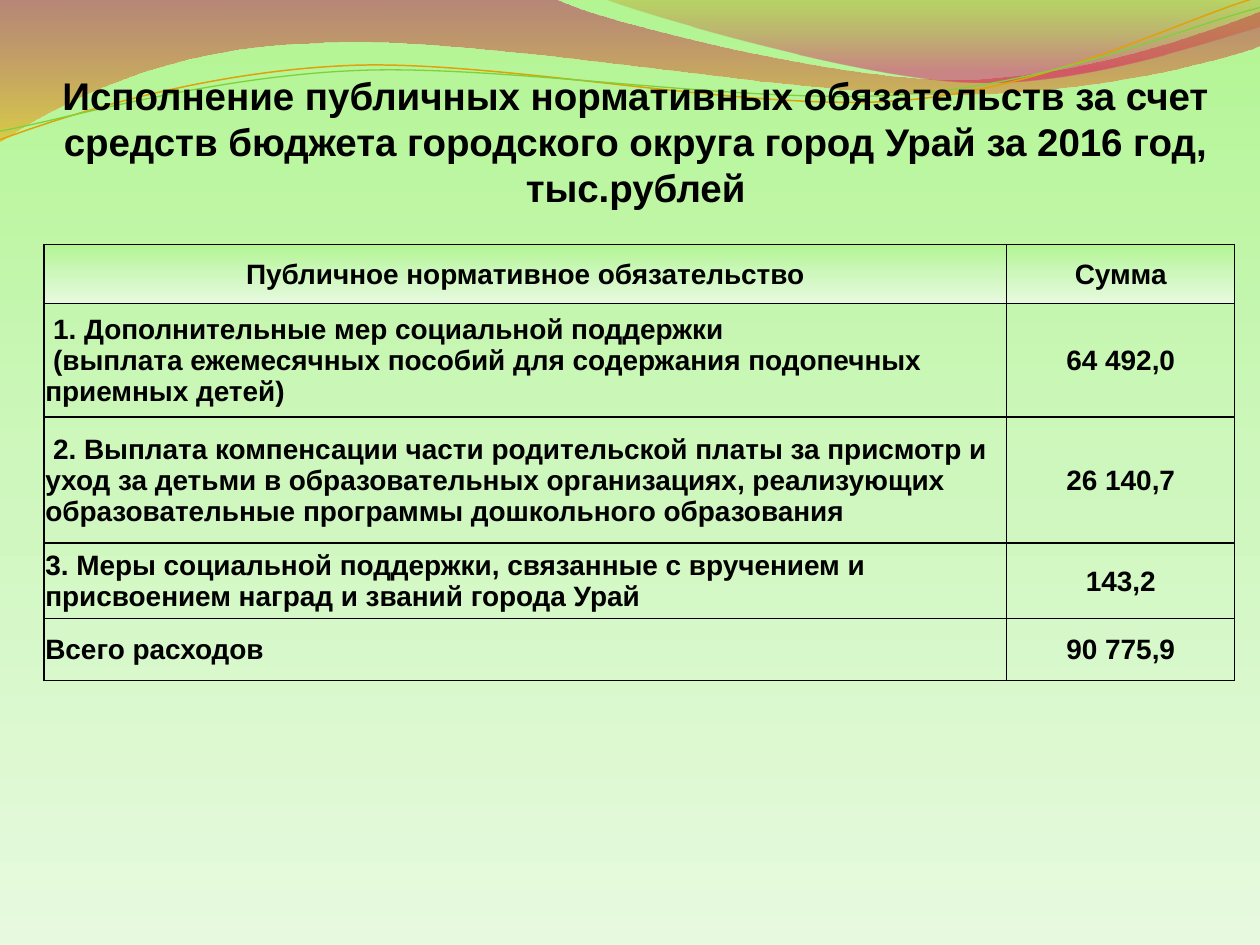
from math import cos, radians, sin

from lxml import etree
from pptx import Presentation
from pptx.dml.color import RGBColor
from pptx.enum.text import MSO_ANCHOR, PP_ALIGN
from pptx.oxml.ns import qn
from pptx.util import Inches, Pt

LEFT, CENTER = PP_ALIGN.LEFT, PP_ALIGN.CENTER
MIDDLE = MSO_ANCHOR.MIDDLE

BLACK = RGBColor(0x00, 0x00, 0x00)
GOLD = RGBColor(0xE0, 0xA2, 0x09)
GREEN = RGBColor(0x7F, 0xD1, 0x3B)

MEADOW = [
    (0, RGBColor(0xB2, 0xF5, 0x92), 100),
    (50, RGBColor(0xCE, 0xF7, 0xBD), 100),
    (100, RGBColor(0xE7, 0xFA, 0xDF), 100),
]
WIDE_WAVE = [(0, RGBColor(0xBD, 0x00, 0x59), 45), (100, RGBColor(0xF0, 0xAB, 0x00), 55)]
RIGHT_WAVE = [(0, RGBColor(0xC3, 0x8B, 0x00), 30), (80, RGBColor(0xE1, 0x00, 0x6B), 45)]

WIDE_WAVE_PATH = [
    [(0, 0)],
    [(4.4, -0.01)],
    [(4.76, 0.17), (6.64, 0.63), (7.58, 0.63)],
    [(8.53, 0.63), (9.58, 0.26), (10, 0.09)],
    [(10.01, 0.36)],
    [(9.83, 0.44), (8.7, 0.76), (7.46, 0.75)],
    [(6.22, 0.75), (3.82, 0.28), (2.57, 0.34)],
    [(1.29, 0.36), (0.46, 0.83), (-0.01, 1.13)],
    [(0, 0)],
]
RIGHT_WAVE_PATH = [
    [(4.79, -0.01)],
    [(5.09, 0.11), (6.82, 0.62), (7.69, 0.65)],
    [(8.56, 0.69), (9.61, 0.32), (10, 0.21)],
    [(10, 0)],
    [(4.79, -0.01)],
]
GOLD_PATH = [
    [(0, 1.11)],
    [(0.48, 0.93), (1.58, 0.57), (2.77, 0.52)],
    [(3.95, 0.47), (5.93, 0.89), (7.13, 0.8)],
    [(8.33, 0.71), (9.38, 0.15), (9.98, -0.02)],
]
GREEN_PATH = [
    [(0, 1.04)],
    [(0.47, 0.96), (1.64, 0.61), (2.83, 0.56)],
    [(4.03, 0.51), (5.97, 0.84), (7.17, 0.75)],
    [(8.36, 0.67), (9.41, 0.21), (10, 0.06)],
]
THREAD_TILT = -2.7

TITLE = (
    "Исполнение публичных нормативных обязательств за счет средств бюджета "
    "городского округа город Урай за 2016 год, тыс.рублей"
)
COLUMN_WIDTHS = [7.64, 1.81]
ROWS = [
    (0.47, "Публичное нормативное обязательство", "Сумма"),
    (0.9, " 1. Дополнительные мер социальной поддержки\n"
          " (выплата ежемесячных пособий для содержания подопечных приемных детей)",
     "64 492,0"),
    (1, " 2. Выплата компенсации части родительской платы за присмотр и уход за детьми "
        "в образовательных организациях, реализующих образовательные программы "
        "дошкольного образования", "26 140,7"),
    (0.6, "3. Меры социальной поддержки, связанные с вручением и присвоением наград "
          "и званий города Урай", "143,2"),
    (0.49, "Всего расходов", "90 775,9"),
]


def paint_gradient(fill, element, stops):
    """Fill with a gradient from top to bottom, stops being percent, colour, opacity."""
    fill.gradient()
    old = element.find(".//" + qn("a:gradFill"))
    gradient = etree.Element(qn("a:gradFill"), rotWithShape="1")
    stop_list = etree.SubElement(gradient, qn("a:gsLst"))
    for percent, colour, opacity in stops:
        stop = etree.SubElement(stop_list, qn("a:gs"), pos=str(percent * 1000))
        tint = etree.SubElement(stop, qn("a:srgbClr"), val=str(colour))
        if opacity < 100:
            etree.SubElement(tint, qn("a:alpha"), val=str(opacity * 1000))
    etree.SubElement(gradient, qn("a:lin"), ang="5400000", scaled="0")
    old.getparent().replace(old, gradient)


def turn(point, centre, degrees):
    """Turn a point clockwise about a centre."""
    angle = radians(degrees)
    x, y = point[0] - centre[0], point[1] - centre[1]
    return (centre[0] + x * cos(angle) - y * sin(angle),
            centre[1] + x * sin(angle) + y * cos(angle))


def add_outline(page, path, close):
    """Add a freeform of lines and Bezier curves without a shadow."""
    points = [(Inches(x), Inches(y)) for segment in path for x, y in segment]
    builder = page.shapes.build_freeform(*points[0])
    builder.add_line_segments(points[1:], close=close)
    shape = builder.convert_to_shape()
    shape.shadow.inherit = False
    lines = iter(shape.element.findall(".//" + qn("a:lnTo")))
    for segment in path[1:]:
        first, *others = [next(lines) for _ in segment]
        if others:
            first.tag = qn("a:cubicBezTo")
            for line in others:
                first.append(line[0])
                line.getparent().remove(line)
    return shape


def add_wave(page, path, stops):
    """Add a closed wave with a gradient."""
    shape = add_outline(page, path, close=True)
    shape.line.fill.background()
    paint_gradient(shape.fill, shape.element, stops)


def add_thread(page, path, colour, width, centre):
    """Add a thin open curve, tilted about its centre."""
    level = [[turn(point, centre, -THREAD_TILT) for point in segment] for segment in path]
    shape = add_outline(page, level, close=False)
    middle = (shape.left + shape.width / 2, shape.top + shape.height / 2)
    target = turn(middle, (Inches(centre[0]), Inches(centre[1])), THREAD_TILT)
    shape.left += round(target[0] - middle[0])
    shape.top += round(target[1] - middle[1])
    shape.rotation = THREAD_TILT
    shape.fill.background()
    shape.line.color.rgb = colour
    shape.line.width = Pt(width)


def write(frame, text, size=16, align=LEFT):
    """Write bold black text, one paragraph a line."""
    frame.word_wrap = True
    for index, line in enumerate(text.split("\n")):
        para = frame.add_paragraph() if index else frame.paragraphs[0]
        para.alignment = align
        span = para.add_run()
        span.text = line
        span.font.name = "Arial"
        span.font.size = Pt(size)
        span.font.bold = True
        span.font.color.rgb = BLACK


def set_borders(cell, **widths):
    """Draw black cell borders, widths in points by side letter."""
    properties = cell._tc.get_or_add_tcPr()
    for side, width in widths.items():
        border = etree.SubElement(properties, qn("a:ln" + side), w=str(Pt(width)))
        solid = etree.SubElement(border, qn("a:solidFill"))
        etree.SubElement(solid, qn("a:srgbClr"), val=str(BLACK))


def add_obligations(page):
    """Add the table of obligations and sums."""
    table = page.shapes.add_table(
        len(ROWS), len(COLUMN_WIDTHS),
        Inches(0.35), Inches(1.94), Inches(9.45), Inches(3.46),
    ).table
    for column, width in zip(table.columns, COLUMN_WIDTHS):
        column.width = Inches(width)
    for row, (height, *texts) in enumerate(ROWS):
        table.rows[row].height = Inches(height)
        for column, text in enumerate(texts):
            cell = table.cell(row, column)
            cell.vertical_anchor = MIDDLE
            cell.margin_left = cell.margin_right = cell.margin_top = Inches(0.01)
            cell.margin_bottom = 0
            write(cell.text_frame, text, align=LEFT if row and not column else CENTER)
            set_borders(
                cell,
                L=0.5 if column else 1,
                R=0.5,
                T=0.5 if row == 1 else 1,
                B=1 if row else 0.5,
            )
            if row:
                cell.fill.background()
            else:
                paint_gradient(cell.fill, cell._tc, MEADOW)


def main():
    """Build the slide and save it."""
    deck = Presentation()
    deck.slide_width, deck.slide_height = Inches(10), Inches(7.5)
    page = deck.slides.add_slide(deck.slide_layouts[6])
    paint_gradient(page.background.fill, page.element, MEADOW)
    add_wave(page, WIDE_WAVE_PATH, WIDE_WAVE)
    add_wave(page, RIGHT_WAVE_PATH, RIGHT_WAVE)
    add_thread(page, GOLD_PATH, GOLD, 0.85, centre=(4.99, 0.58))
    add_thread(page, GREEN_PATH, GREEN, 0.75, centre=(5, 0.59))
    box = page.shapes.add_textbox(Inches(0.28), Inches(0.52), Inches(9.53), Inches(2.66))
    write(box.text_frame, TITLE, size=22, align=CENTER)
    add_obligations(page)
    deck.save("out.pptx")


if __name__ == "__main__":
    main()
